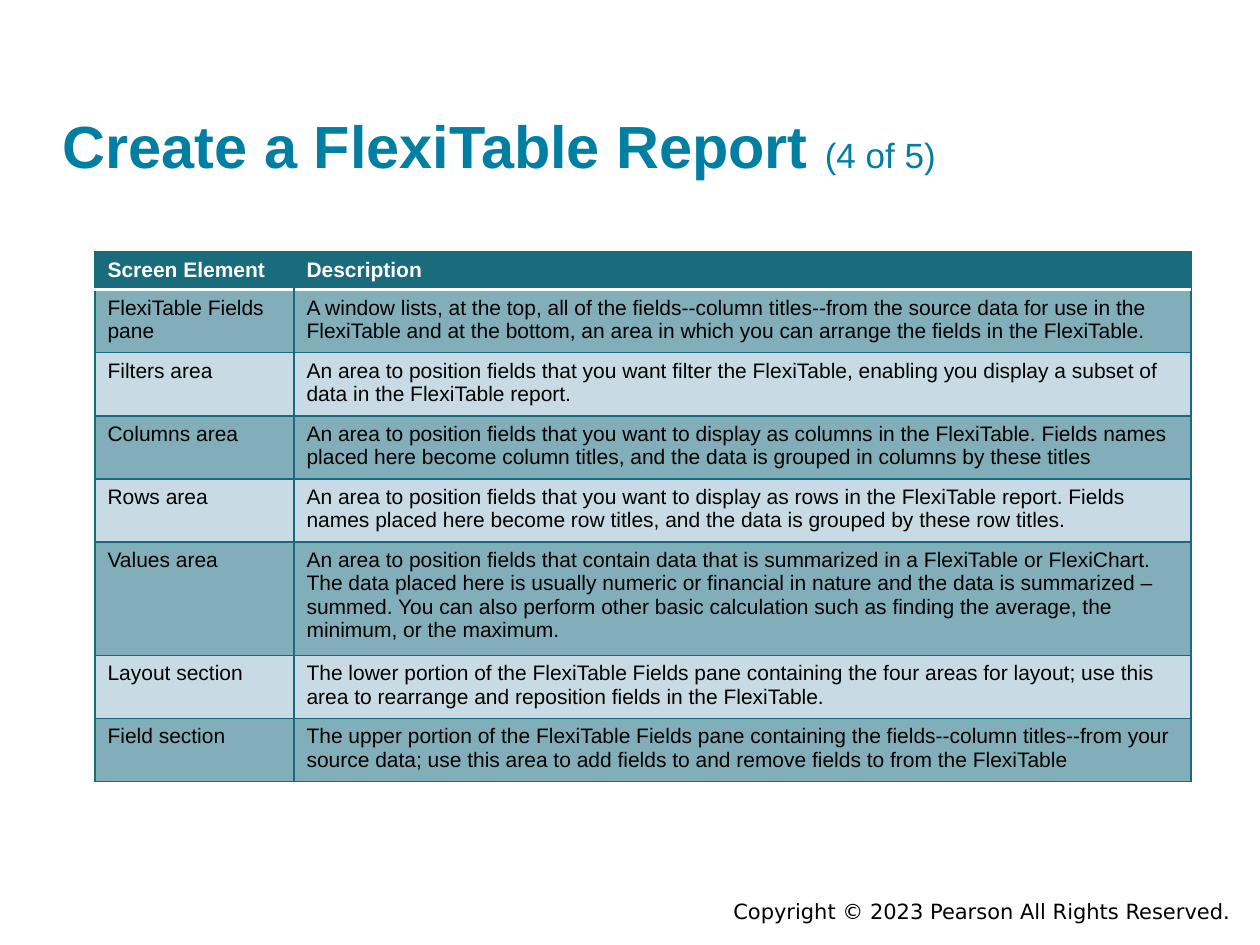
from lxml.etree import SubElement
from pptx import Presentation
from pptx.dml.color import RGBColor
from pptx.enum.text import MSO_ANCHOR as Anchor, PP_ALIGN as Align
from pptx.oxml.ns import qn
from pptx.util import Pt

PX = 914400 // 126
TITLE_BLUE = RGBColor(0x00, 0x7F, 0xA3)
HEADER_TEAL = RGBColor(0x1A, 0x6C, 0x7C)
BORDER_TEAL = RGBColor(0x17, 0x6B, 0x7C)
BAND_DARK = RGBColor(0x82, 0xAE, 0xBA)
BAND_LIGHT = RGBColor(0xC8, 0xDB, 0xE4)
WHITE = RGBColor(0xFF, 0xFF, 0xFF)
BLACK = RGBColor(0x00, 0x00, 0x00)

COLUMN_WIDTHS = [199, 897]
ROW_HEIGHTS = [33, 52, 52, 52, 52, 59, 52, 52]
ROWS = [
    ("Screen Element", "Description"),
    ("FlexiTable Fields pane",
     "A window lists, at the top, all of the fields--column titles--from the source data for use in the "
     "FlexiTable and at the bottom, an area in which you can arrange the fields in the FlexiTable."),
    ("Filters area",
     "An area to position fields that you want filter the FlexiTable, enabling you display a subset of "
     "data in the FlexiTable report."),
    ("Columns area",
     "An area to position fields that you want to display as columns in the FlexiTable. Fields names "
     "placed here become column titles, and the data is grouped in columns by these titles"),
    ("Rows area",
     "An area to position fields that you want to display as rows in the FlexiTable report. Fields "
     "names placed here become row titles, and the data is grouped by these row titles."),
    ("Values area",
     "An area to position fields that contain data that is summarized in a FlexiTable or FlexiChart. "
     "The data placed here is usually numeric or financial in nature and the data is summarized –"
     "summed. You can also perform other basic calculation such as finding the average, the "
     "minimum, or the maximum."),
    ("Layout section",
     "The lower portion of the FlexiTable Fields pane containing the four areas for layout; use this "
     "area to rearrange and reposition fields in the FlexiTable."),
    ("Field section",
     "The upper portion of the FlexiTable Fields pane containing the fields--column titles--from your "
     "source data; use this area to add fields to and remove fields to from the FlexiTable"),
]


def style_font(font, size, color, bold=False, name="Arial"):
    """Set the typeface, size, colour and weight of a font."""
    font.name, font.size, font.bold = name, Pt(size), bold
    font.color.rgb = color


def add_text_frame(slide, left, top, width, height):
    """Add a wrapping text box and return its frame."""
    box = slide.shapes.add_textbox(left * PX, top * PX, width * PX, height * PX)
    box.text_frame.word_wrap = True
    return box.text_frame


def add_title(slide, left, top, width, height):
    """Place the bold heading and its lighter part count on one line."""
    title = add_text_frame(slide, left, top, width, height)
    title.margin_left = title.margin_right = title.margin_top = title.margin_bottom = 0
    title.vertical_anchor = Anchor.BOTTOM
    for wording, size, bold in [("Create a FlexiTable Report ", 34, True), ("(4 of 5)", 20, False)]:
        part = title.paragraphs[0].add_run()
        part.text = wording
        style_font(part.font, size, TITLE_BLUE, bold)


def add_border(cell, side, color, points):
    """Draw one edge of a cell, called in the order L, R, T, B."""
    edge = SubElement(cell._tc.get_or_add_tcPr(), qn(f"a:ln{side}"), w=str(Pt(points)))
    if color is None:
        SubElement(edge, qn("a:noFill"))
    else:
        SubElement(SubElement(edge, qn("a:solidFill")), qn("a:srgbClr"), val=str(color))


def style_cell(cell, row, column):
    """Give a cell its borders, fill and font by its place in the table."""
    is_header = row == 0
    edges = {side: (BORDER_TEAL, 0.75) for side in "LRTB"}
    if is_header:
        edges["R" if column == 0 else "L"] = (None, 0.75)
        edges["B"] = (WHITE, 2)
    elif row == 1:
        edges["T"] = (WHITE, 2)
    for side, (color, points) in edges.items():
        add_border(cell, side, color, points)
    cell.fill.solid()
    cell.fill.fore_color.rgb = HEADER_TEAL if is_header else BAND_DARK if row % 2 else BAND_LIGHT
    style_font(cell.text_frame.paragraphs[0].runs[0].font, 12, WHITE if is_header else BLACK, is_header)


def add_element_table(slide, left, top):
    """Place the table of screen elements and their descriptions."""
    table = slide.shapes.add_table(
        len(ROWS), len(COLUMN_WIDTHS), left * PX, top * PX,
        sum(COLUMN_WIDTHS) * PX, sum(ROW_HEIGHTS) * PX).table
    for column, width in zip(table.columns, COLUMN_WIDTHS):
        column.width = width * PX
    for row, (height, wordings) in enumerate(zip(ROW_HEIGHTS, ROWS)):
        table.rows[row].height = height * PX
        for column, wording in enumerate(wordings):
            cell = table.cell(row, column)
            cell.text = wording
            style_cell(cell, row, column)


def add_copyright(slide, left, top, width, height):
    """Place the right-aligned copyright line."""
    notice = add_text_frame(slide, left, top, width, height).paragraphs[0]
    notice.text = "Copyright © 2023 Pearson All Rights Reserved."
    notice.alignment = Align.RIGHT
    style_font(notice.runs[0].font, 12, BLACK, name="DejaVu Sans")


def main():
    """Build the slide and save it."""
    deck = Presentation()
    deck.slide_width, deck.slide_height = 1260 * PX, 945 * PX
    slide = deck.slides.add_slide(deck.slide_layouts[6])
    add_copyright(slide, 399, 892, 844, 38)
    add_title(slide, 63, 30, 1134, 150)
    add_element_table(slide, 95, 252)
    deck.save("out.pptx")


if __name__ == "__main__":
    main()
